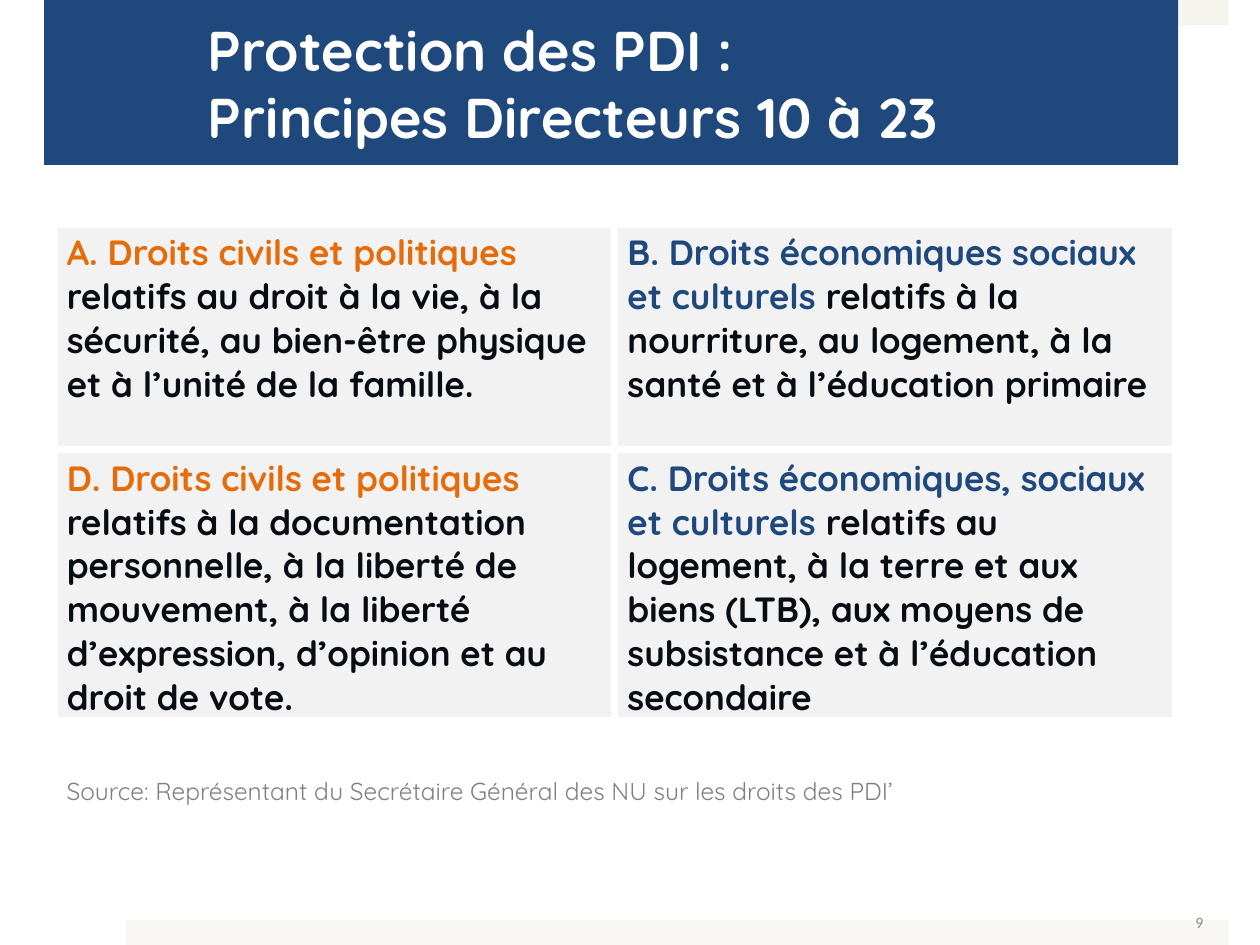
"""Build the slide on the protection of displaced persons, principles 10 to 23."""
from pptx import Presentation, util as u
from pptx.dml.color import RGBColor
from pptx.enum import shapes, text
from lxml import etree

COLORS = {"band": "F5F4ED", "footer": "F8F7F3", "blue": "1F497D", "orange": "E46C0A",
          "ink": "070D13", "cell": "F2F2F2", "white": "FFFFFF", "grey": "808080", "number": "898989"}
WIDTH, HEIGHT = 10, 7.5
MARGIN = 0.43
DRAWING = "http://schemas.openxmlformats.org/drawingml/2006/main"


def style(font, size, color, bold=False, name="Quicksand"):
    font.name, font.size, font.bold = name, u.Pt(size), bold
    font.color.rgb = RGBColor.from_string(COLORS[color])


def add_box(left, top, width, height, fill=None):
    box = [u.Inches(value) for value in (left, top, width, height)]
    if fill is None:
        shape = slide.shapes.add_textbox(*box)
    else:
        shape = slide.shapes.add_shape(shapes.MSO_SHAPE.RECTANGLE, *box)
        shape.shadow.inherit = False
        shape.fill.solid()
        shape.fill.fore_color.rgb = RGBColor.from_string(COLORS[fill])
        shape.line.fill.background()
    shape.text_frame.word_wrap = True
    return shape


presentation = Presentation()
presentation.slide_width, presentation.slide_height = u.Inches(WIDTH), u.Inches(HEIGHT)
slide = presentation.slides.add_slide(presentation.slide_layouts[6])

for top, color in ((0, "band"), (HEIGHT - 0.2, "footer")):
    add_box(1, top, 8.75, 0.2, color)

number = add_box(7.29, 7.12, 2.33, 0.4).text_frame
number.text = "9"
number.vertical_anchor = text.MSO_ANCHOR.MIDDLE
number.margin_left = number.margin_right = u.Inches(0.07)
number.margin_top = number.margin_bottom = u.Inches(0.04)
number.paragraphs[0].alignment = text.PP_ALIGN.RIGHT
style(number.paragraphs[0].runs[0].font, 9, "number", name="Calibri")

title = add_box(0.35, 0, 0.9 * WIDTH, 1.31, "blue").text_frame
title.margin_left, title.margin_right = u.Inches(1.3), u.Inches(0.3)
title.vertical_anchor = text.MSO_ANCHOR.MIDDLE
title.paragraphs[0].text = "Protection des PDI :\vPrincipes Directeurs 10 à 23"
title.paragraphs[0].alignment = text.PP_ALIGN.LEFT
for run in title.paragraphs[0].runs:
    style(run.font, 32, "white", True)

rights = [
    [("A. Droits civils et politiques\v",
      "relatifs au droit à la vie, à la sécurité, au bien-être physique et à l’unité de la famille."),
     ("B. Droits économiques sociaux et culturels ",
      "relatifs à la nourriture, au logement, à la santé et à l’éducation primaire")],
    [("D. Droits civils et politiques ",
      "relatifs à la documentation personnelle, à la liberté de mouvement, à la liberté "
      "d’expression, d’opinion et au droit de vote."),
     ("C. Droits économiques, sociaux et culturels ",
      "relatifs au logement, à la terre et aux biens (LTB), aux moyens de subsistance "
      "et à l’éducation secondaire")],
]
row_heights = (1.79, 2.15)
table = slide.shapes.add_table(2, 2, u.Inches(MARGIN), u.Inches(1.78),
                               u.Inches(8.9), u.Inches(sum(row_heights))).table
table.first_row = table.horz_banding = False
for row, height in zip(table.rows, row_heights):
    row.height = u.Inches(height)

for row_index, row in enumerate(rights):
    for column_index, (heading, body) in enumerate(row):
        cell = table.cell(row_index, column_index)
        properties = cell._tc.get_or_add_tcPr()
        for side in ("lnL", "lnR", "lnT", "lnB"):
            border = etree.SubElement(properties, f"{{{DRAWING}}}{side}", w=str(u.Pt(4.5)))
            fill = etree.SubElement(border, f"{{{DRAWING}}}solidFill")
            etree.SubElement(fill, f"{{{DRAWING}}}srgbClr", val=COLORS["white"])
        cell.fill.solid()
        cell.fill.fore_color.rgb = RGBColor.from_string(COLORS["cell"])
        paragraph = cell.text_frame.paragraphs[0]
        paragraph.text = heading
        style(paragraph.runs[0].font, 20, ("orange", "blue")[column_index], True)
        run = paragraph.add_run()
        run.text = body
        style(run.font, 20, "ink", True)

source = add_box(MARGIN, 6.11, 7.17, 0.34).text_frame
source.text = "Source: Représentant du Secrétaire Général des NU sur les droits des PDI’"
style(source.paragraphs[0].runs[0].font, 14, "grey")

presentation.save("out.pptx")
